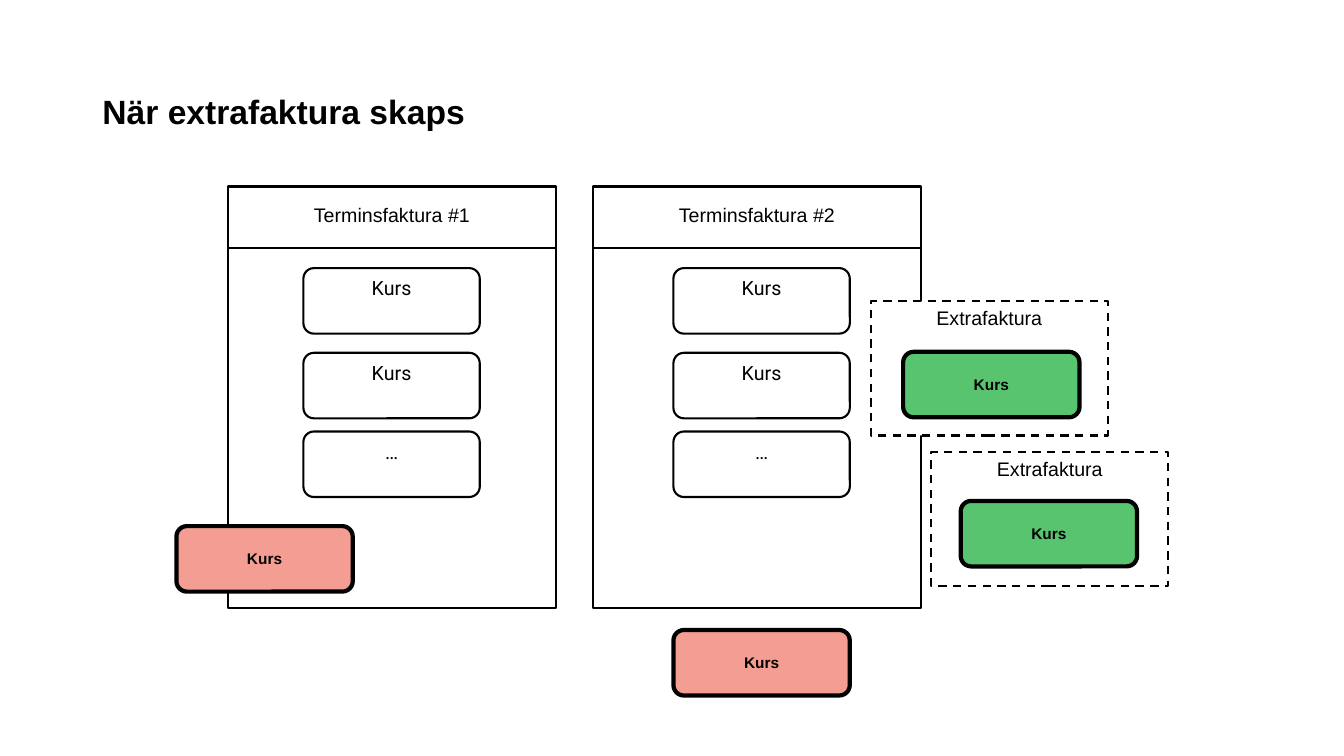
from pptx import Presentation, util as u
from pptx.dml.color import RGBColor
from pptx.enum import dml, shapes, text
from pptx.oxml import parse_xml
from pptx.oxml.ns import nsdecls

Pt = u.Pt

# Content: places are (left, top) in points
TITLE = "När extrafaktura skaps"
INVOICES = [  # label, left edge, left edge of its courses
    ("Terminsfaktura #1", 162.7, 216.7),
    ("Terminsfaktura #2", 423.4, 481),
]
COURSES = [("Kurs", 191.5), ("Kurs", 252), ("…", 308.2)]  # label, top
EXTRA_INVOICES = [  # label, place, course, course place
    ("Extrafaktura", (665.3, 322.6), "Kurs", (686.2, 357.8)),
    ("Extrafaktura", (622.1, 215.3), "Kurs", (645.1, 251.3)),
]
REMOVED_COURSES = [("Kurs", (481, 450)), ("Kurs", (126, 375.8))]

# Sizes in points
INVOICE_TOP, DIVIDER_TOP = 133.2, 177.1
INVOICE_SIZE = (234.7, 301)
EXTRA_SIZE = (169.2, 95.8)
COURSE_SIZE = (126, 46.8)

THEME = {
    "ink": "000000", "paper": "FFFFFF", "removed": "F49D92", "added": "59C46F",
    "font": "Arial", "course_font": "Roboto",
    "title": 24, "label": 14, "changed": 11,
    "thin": 1.5, "thick": 3,
}


def color(name):
    return RGBColor.from_string(THEME[name])


def add_run(paragraph, words, type_size, font="font", bold=False):
    run = paragraph.add_run()
    run.text = words
    run.font.name = THEME[font]
    run.font.size = Pt(THEME[type_size])
    run.font.bold = bold
    run.font.color.rgb = color("ink")


def add_box(kind, place, extent, label, fill="paper", weight="thin",
            dashed=False, top_inset=3.6, type_size="label", **run_style):
    box = slide.shapes.add_shape(kind, *map(Pt, place + extent))
    box.shadow.inherit = False
    box.fill.solid()
    box.fill.fore_color.rgb = color(fill)
    box.line.color.rgb = color("ink")
    box.line.width = Pt(THEME[weight])
    if dashed:
        box.line.dash_style = dml.MSO_LINE.DASH
    frame = box.text_frame
    frame.word_wrap = True
    frame.vertical_anchor = text.MSO_ANCHOR.TOP
    frame.margin_top = Pt(top_inset)
    paragraph = frame.paragraphs[0]
    paragraph.alignment = text.PP_ALIGN.CENTER
    add_run(paragraph, label, type_size, **run_style)
    return box


def add_course(place, label, **style):
    course = add_box(shapes.MSO_SHAPE.ROUNDED_RECTANGLE, place, COURSE_SIZE, label, **style)
    course.adjustments[0] = 0.16
    return course


def add_changed_course(place, label, fill):
    course = add_course(place, label, fill=fill, weight="thick",
                        top_inset=4.3, type_size="changed", bold=True)
    frame = course.text_frame
    frame.vertical_anchor = text.MSO_ANCHOR.MIDDLE
    frame.margin_left = frame.margin_right = frame.margin_bottom = Pt(4.3)


def add_divider(left, width):
    divider = slide.shapes.add_connector(
        shapes.MSO_CONNECTOR.STRAIGHT, Pt(left), Pt(DIVIDER_TOP), Pt(left + width), Pt(DIVIDER_TOP))
    divider.line.color.rgb = color("ink")
    divider.line.width = Pt(THEME["thin"])
    divider._element.spPr.append(parse_xml(f"<a:effectLst {nsdecls('a')}/>"))


deck = Presentation()
deck.slide_width, deck.slide_height = Pt(960), Pt(540)
slide = deck.slides.add_slide(deck.slide_layouts[5])

# Title
title = slide.shapes.title
title.left, title.top, title.width, title.height = map(Pt, (66, 28.8, 828, 104.4))
title.text_frame.vertical_anchor = text.MSO_ANCHOR.MIDDLE
heading = title.text_frame.paragraphs[0]
heading.alignment = text.PP_ALIGN.LEFT
heading.line_spacing = 0.9
add_run(heading, TITLE, "title", bold=True)

# Term invoices with their courses
for label, left, course_left in INVOICES:
    add_box(shapes.MSO_SHAPE.RECTANGLE, (left, INVOICE_TOP), INVOICE_SIZE, label,
            top_inset=11.5)
    add_divider(left, INVOICE_SIZE[0])
    for course, top in COURSES:
        add_course((course_left, top), course, font="course_font")

# Extra invoices with added courses
for label, place, course, course_place in EXTRA_INVOICES:
    add_box(shapes.MSO_SHAPE.RECTANGLE, place, EXTRA_SIZE, label, dashed=True)
    add_changed_course(course_place, course, "added")

# Removed courses
for course, place in REMOVED_COURSES:
    add_changed_course(place, course, "removed")

deck.save("out.pptx")
